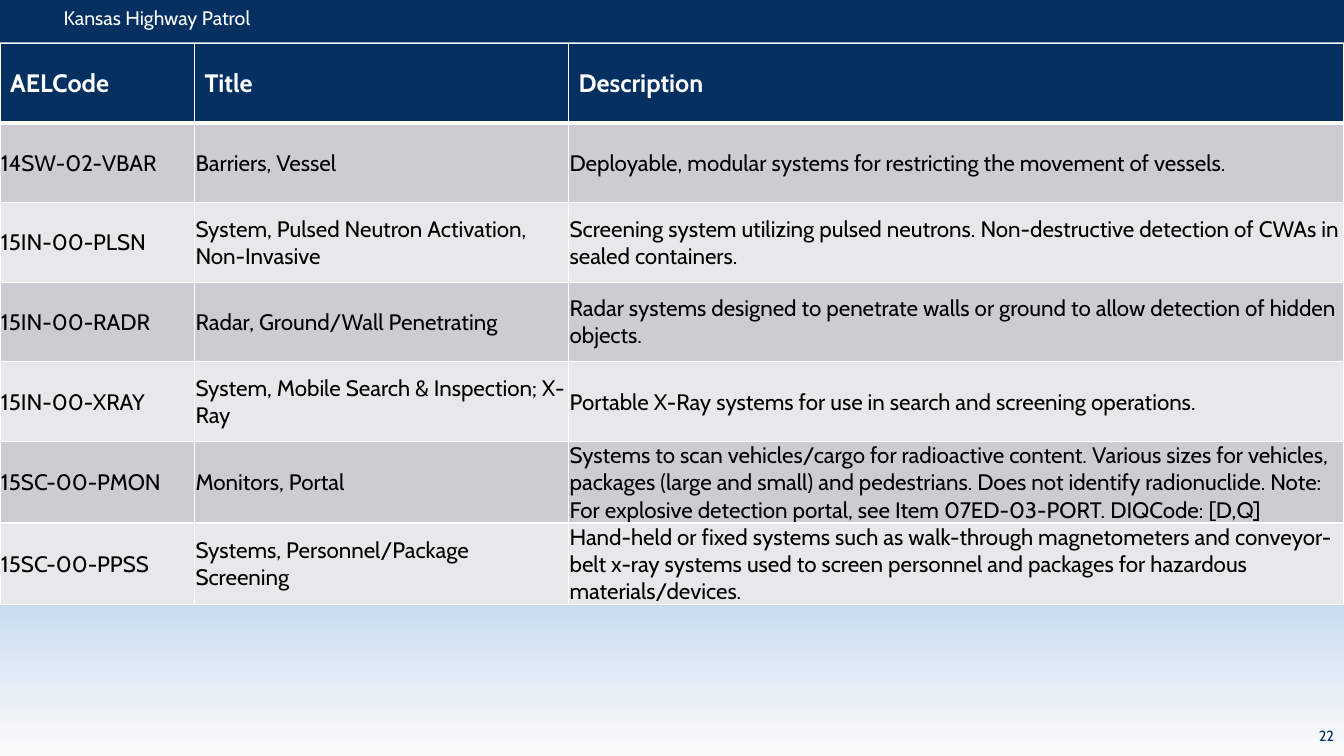
from lxml import etree
from pptx import Presentation
from pptx.dml.color import RGBColor
from pptx.enum.shapes import MSO_SHAPE
from pptx.enum.text import MSO_ANCHOR, MSO_AUTO_SIZE, PP_ALIGN
from pptx.oxml.ns import qn
from pptx.util import Inches, Pt

RECTANGLE = MSO_SHAPE.RECTANGLE
TOP, MIDDLE = MSO_ANCHOR.TOP, MSO_ANCHOR.MIDDLE
LEFT, RIGHT = PP_ALIGN.LEFT, PP_ALIGN.RIGHT

NAVY = RGBColor(0x04, 0x30, 0x61)
WHITE = RGBColor(0xFF, 0xFF, 0xFF)
BLACK = RGBColor(0x00, 0x00, 0x00)
ROW_FILLS = [RGBColor(0xCC, 0xCD, 0xD2), RGBColor(0xE7, 0xE8, 0xEA)]
PALE = RGBColor(0xFC, 0xFB, 0xFB)
SKY_STOPS = [
    (0, RGBColor(0xEB, 0xF4, 0xFE)),
    (37, PALE),
    (74, RGBColor(0xB9, 0xD3, 0xEB)),
    (100, PALE),
]

FONT = "Cabin"
SLIDE_WIDTH, SLIDE_HEIGHT = 13.33, 7.5
COLUMN_WIDTHS = [1.93, 3.71, 7.69]
ROW_HEIGHT = 0.79
TABLE_TOP = 0.43

HEADINGS = ["AELCode", "Title", "Description"]
EQUIPMENT = [
    ("14SW-02-VBAR", "Barriers, Vessel",
     "Deployable, modular systems for restricting the movement of vessels."),
    ("15IN-00-PLSN", "System, Pulsed Neutron Activation, Non-Invasive",
     "Screening system utilizing pulsed neutrons. Non-destructive detection "
     "of CWAs in sealed containers."),
    ("15IN-00-RADR", "Radar, Ground/Wall Penetrating",
     "Radar systems designed to penetrate walls or ground to allow detection "
     "of hidden objects."),
    ("15IN-00-XRAY", "System, Mobile Search & Inspection; X-Ray",
     "Portable X-Ray systems for use in search and screening operations."),
    ("15SC-00-PMON", "Monitors, Portal",
     "Systems to scan vehicles/cargo for radioactive content. Various sizes "
     "for vehicles, packages (large and small) and pedestrians. Does not "
     "identify radionuclide. Note: For explosive detection portal, see Item "
     "07ED-03-PORT. DIQCode: [D,Q]"),
    ("15SC-00-PPSS", "Systems, Personnel/Package Screening",
     "Hand-held or fixed systems such as walk-through magnetometers and "
     "conveyor-belt x-ray systems used to screen personnel and packages for "
     "hazardous materials/devices."),
]


def write(frame, text, size, color, bold=False, align=LEFT):
    para = frame.paragraphs[0]
    para.alignment = align
    span = para.add_run()
    span.text = text
    span.font.name = FONT
    span.font.size = Pt(size)
    span.font.bold = bold
    span.font.color.rgb = color


def paint_background(page):
    fill = page.background.fill
    fill.gradient()
    fill.gradient_angle = 270
    stops = page.element.xpath(".//p:bg//a:gsLst")[0]
    for stop in list(stops):
        stops.remove(stop)
    for percent, color in SKY_STOPS:
        stop = etree.SubElement(stops, qn("a:gs"), pos=str(percent * 1000))
        etree.SubElement(stop, qn("a:srgbClr"), val=str(color))


def add_header(page):
    # Band, placed behind the title
    band = page.shapes.add_shape(RECTANGLE, Inches(-0.05), Inches(-0.03),
                                 Inches(13.38), Inches(0.45))
    band.shadow.inherit = False
    band.fill.solid()
    band.fill.fore_color.rgb = NAVY
    band.line.fill.background()

    title = page.shapes.title
    title.element.addprevious(band.element)
    title.left, title.top = Inches(0.53), Inches(0.01)
    title.width, title.height = Inches(5.77), Inches(0.34)
    frame = title.text_frame
    frame.auto_size = MSO_AUTO_SIZE.SHAPE_TO_FIT_TEXT
    frame.vertical_anchor = TOP
    write(frame, "Kansas Highway Patrol", 14, WHITE)


def add_page_number(page, number):
    width, height = 0.84, 0.4
    box = page.shapes.add_textbox(Inches(SLIDE_WIDTH - width),
                                  Inches(SLIDE_HEIGHT - height),
                                  Inches(width), Inches(height))
    frame = box.text_frame
    frame.word_wrap = True
    frame.vertical_anchor = MIDDLE
    write(frame, number, 10.5, NAVY, align=RIGHT)


def set_borders(cell, top, bottom):
    properties = cell._tc.get_or_add_tcPr()
    sides = [("a:lnL", 1), ("a:lnR", 1), ("a:lnT", top), ("a:lnB", bottom)]
    for index, (tag, width) in enumerate(sides):
        # Borders come before the fill in the cell properties
        line = etree.Element(qn(tag), w=str(Pt(width)))
        fill = etree.SubElement(line, qn("a:solidFill"))
        etree.SubElement(fill, qn("a:srgbClr"), val=str(WHITE))
        properties.insert(index, line)


def fill_cell(cell, text, row):
    heading = row == 0
    cell.vertical_anchor = MIDDLE
    cell.fill.solid()
    cell.fill.fore_color.rgb = NAVY if heading else ROW_FILLS[(row - 1) % 2]
    if heading:
        write(cell.text_frame, text, 18, WHITE, bold=True)
    else:
        cell.margin_left = cell.margin_right = cell.margin_top = Inches(0.01)
        cell.margin_bottom = 0
        write(cell.text_frame, text, 16, BLACK)
    set_borders(cell, top=3 if row == 1 else 1, bottom=3 if heading else 1)


def add_equipment_table(page):
    rows = [HEADINGS, *EQUIPMENT]
    table = page.shapes.add_table(
        len(rows), len(HEADINGS), 0, Inches(TABLE_TOP),
        Inches(sum(COLUMN_WIDTHS)), Inches(ROW_HEIGHT * len(rows))).table
    for column, width in zip(table.columns, COLUMN_WIDTHS):
        column.width = Inches(width)
    for row, texts in enumerate(rows):
        table.rows[row].height = Inches(ROW_HEIGHT)
        for column, text in enumerate(texts):
            fill_cell(table.cell(row, column), text, row)


def main():
    deck = Presentation()
    deck.slide_width = Inches(SLIDE_WIDTH)
    deck.slide_height = Inches(SLIDE_HEIGHT)
    page = deck.slides.add_slide(deck.slide_layouts.get_by_name("Title Only"))
    paint_background(page)
    add_header(page)
    add_page_number(page, "22")
    add_equipment_table(page)
    deck.save("out.pptx")


if __name__ == "__main__":
    main()
